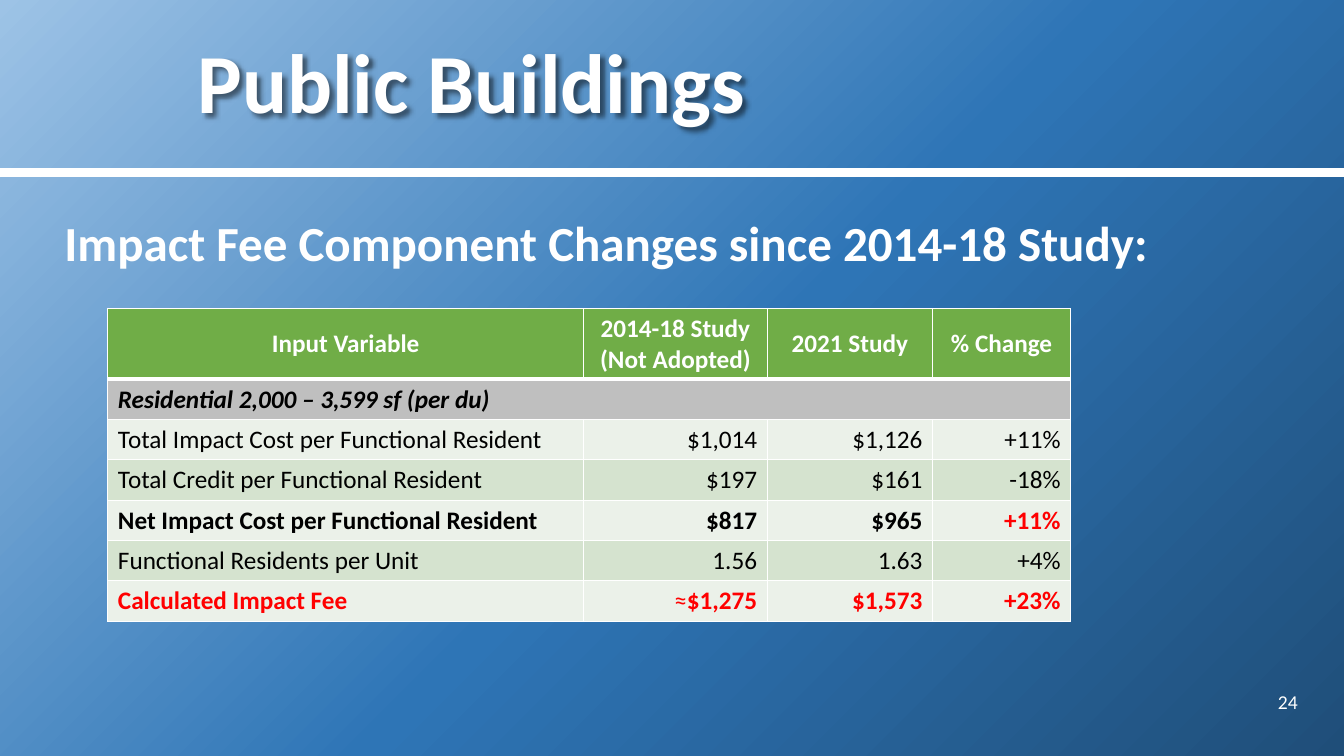
from pptx import Presentation
from pptx.dml.color import RGBColor
from pptx.enum.shapes import MSO_CONNECTOR
from pptx.enum.text import MSO_ANCHOR, PP_ALIGN
from pptx.oxml import parse_xml
from pptx.oxml.ns import nsdecls, qn
from pptx.util import Inches, Pt

WHITE = RGBColor(0xFF, 0xFF, 0xFF)
BLACK = RGBColor(0x00, 0x00, 0x00)
RED = RGBColor(0xFF, 0x00, 0x00)
GREEN = RGBColor(0x70, 0xAD, 0x47)
GRAY = RGBColor(0xBF, 0xBF, 0xBF)
PALE = RGBColor(0xEB, 0xF1, 0xE9)
SAGE = RGBColor(0xD5, 0xE3, 0xCF)
SKY = RGBColor(0x9D, 0xC3, 0xE6)
BLUE = RGBColor(0x2E, 0x75, 0xB6)
NAVY = RGBColor(0x1F, 0x4E, 0x79)

BACKGROUND_STOPS = [(0, SKY), (53, BLUE), (100, NAVY)]
COLUMN_WIDTHS = [4.72, 1.82, 1.64, 1.37]
HEADER_HEIGHT, ROW_HEIGHT = 0.7, 0.4
HEADERS = ["Input Variable", "2014-18 Study (Not Adopted)", "2021 Study", "% Change"]
GROUP = "Residential 2,000 – 3,599 sf (per du)"
FEE_ROWS = [
    ["Total Impact Cost per Functional Resident", "$1,014", "$1,126", "+11%"],
    ["Total Credit per Functional Resident", "$197", "$161", "-18%"],
    ["Net Impact Cost per Functional Resident", "$817", "$965", "+11%"],
    ["Functional Residents per Unit", "1.56", "1.63", "+4%"],
    ["Calculated Impact Fee", "≈$1,275", "$1,573", "+23%"],
]
BOLD_ROWS = (2, 4)
RED_CELLS = {(2, 3), (4, 0), (4, 1), (4, 2), (4, 3)}


def apply_format(target, values):
    """Set every attribute named in a dict of format values."""
    for name, value in values.items():
        setattr(target, name, value)


def add_span(para, text, color, size, **values):
    """Add one formatted run to a paragraph."""
    span = para.add_run()
    span.text = text
    apply_format(span.font, {"name": "Calibri", "size": Pt(size), **values})
    span.font.color.rgb = color


def set_background(page):
    """Fill the page with a gradient that starts in the top left corner."""
    page.background.fill.gradient()
    gradient = page.background._cSld.find(".//" + qn("a:gradFill"))
    stops = "".join(
        f'<a:gs pos="{place * 1000}"><a:srgbClr val="{color}"/></a:gs>'
        for place, color in BACKGROUND_STOPS
    )
    gradient.getparent().replace(gradient, parse_xml(
        f'<a:gradFill {nsdecls("a")} rotWithShape="1"><a:gsLst>{stops}</a:gsLst>'
        '<a:path path="circle"><a:fillToRect r="100000" b="100000"/></a:path>'
        '</a:gradFill>'
    ))


def add_rule(page):
    """Draw the white rule under the title."""
    rule = page.shapes.add_connector(
        MSO_CONNECTOR.STRAIGHT, Inches(0), Inches(1.71), Inches(13.33), Inches(1.71)
    )
    rule.line.color.rgb = WHITE
    rule.line.width = Pt(6)
    rule._element.spPr.append(parse_xml(f'<a:effectLst {nsdecls("a")}/>'))


def add_text(page, text, place, size, anchor, layout, bold=True):
    """Add a white one-paragraph text box."""
    box = page.shapes.add_textbox(*map(Inches, place))
    apply_format(box.text_frame, {"word_wrap": True, "vertical_anchor": anchor})
    para = box.text_frame.paragraphs[0]
    apply_format(para, layout)
    add_span(para, text, WHITE, size, bold=bold)
    return box


def add_shadow(box):
    """Give the text of an unfilled box a soft shadow."""
    box._element.spPr.append(parse_xml(
        f'<a:effectLst {nsdecls("a")}><a:outerShdw blurRad="38100" dist="38100" '
        'dir="2700000" algn="tl"><a:srgbClr val="000000"><a:alpha val="50000"/>'
        '</a:srgbClr></a:outerShdw></a:effectLst>'
    ))


def set_borders(cell, top, bottom):
    """Draw white cell borders with the given top and bottom widths."""
    properties = cell._tc.get_or_add_tcPr()
    for side, width in {"L": 1, "R": 1, "T": top, "B": bottom}.items():
        properties.append(parse_xml(
            f'<a:ln{side} {nsdecls("a")} w="{Pt(width)}"><a:solidFill>'
            f'<a:srgbClr val="{WHITE}"/></a:solidFill></a:ln{side}>'
        ))


def fill_cell(cell, text, fill, color, align, top=1, bottom=1, **values):
    """Write and format one table cell."""
    set_borders(cell, top, bottom)
    cell.fill.solid()
    cell.fill.fore_color.rgb = fill
    cell.vertical_anchor = MSO_ANCHOR.MIDDLE
    para = cell.text_frame.paragraphs[0]
    para.alignment = align
    if text.startswith("≈"):
        add_span(para, "≈", color, 18, bold=False)
        text = text[1:]
    add_span(para, text, color, 18, **values)


def add_fee_table(page):
    """Add the table that compares the two studies."""
    row_count = len(FEE_ROWS) + 2
    height = HEADER_HEIGHT + ROW_HEIGHT * (row_count - 1)
    frame = page.shapes.add_table(
        row_count, len(HEADERS), Inches(1.07), Inches(3.06),
        Inches(sum(COLUMN_WIDTHS)), Inches(height),
    )
    table = frame.table
    apply_format(table, {"first_row": False, "horz_banding": False})
    for column, width in zip(table.columns, COLUMN_WIDTHS):
        column.width = Inches(width)
    for index, row in enumerate(table.rows):
        row.height = Inches(ROW_HEIGHT if index else HEADER_HEIGHT)
    for column, text in enumerate(HEADERS):
        fill_cell(table.cell(0, column), text, GREEN, WHITE, PP_ALIGN.CENTER,
                  bottom=3, bold=True)
    group = table.cell(1, 0)
    group.merge(table.cell(1, len(HEADERS) - 1))
    fill_cell(group, GROUP, GRAY, BLACK, PP_ALIGN.LEFT, top=3, bold=True, italic=True)
    for row, texts in enumerate(FEE_ROWS):
        for column, text in enumerate(texts):
            fill_cell(
                table.cell(row + 2, column), text,
                SAGE if row % 2 else PALE,
                RED if (row, column) in RED_CELLS else BLACK,
                PP_ALIGN.RIGHT if column else PP_ALIGN.LEFT,
                bold=row in BOLD_ROWS,
            )


def main():
    """Build the slide and save it."""
    deck = Presentation()
    apply_format(deck, {"slide_width": Inches(13.33), "slide_height": Inches(7.5)})
    page = deck.slides.add_slide(deck.slide_layouts[6])
    set_background(page)
    add_rule(page)
    add_text(page, "24", (12.08, 6.76, 0.89, 0.4), 14, MSO_ANCHOR.MIDDLE,
             {"alignment": PP_ALIGN.RIGHT}, bold=False)
    add_text(page, "Impact Fee Component Changes since 2014-18 Study:",
             (0.54, 1.94, 12.42, 5.27), 35, MSO_ANCHOR.TOP, {"line_spacing": 1.2})
    add_fee_table(page)
    title = add_text(page, "Public Buildings", (1.86, 0, 11.1, 1.71), 60,
                     MSO_ANCHOR.MIDDLE, {"line_spacing": 0.9})
    add_shadow(title)
    deck.save("out.pptx")


if __name__ == "__main__":
    main()
